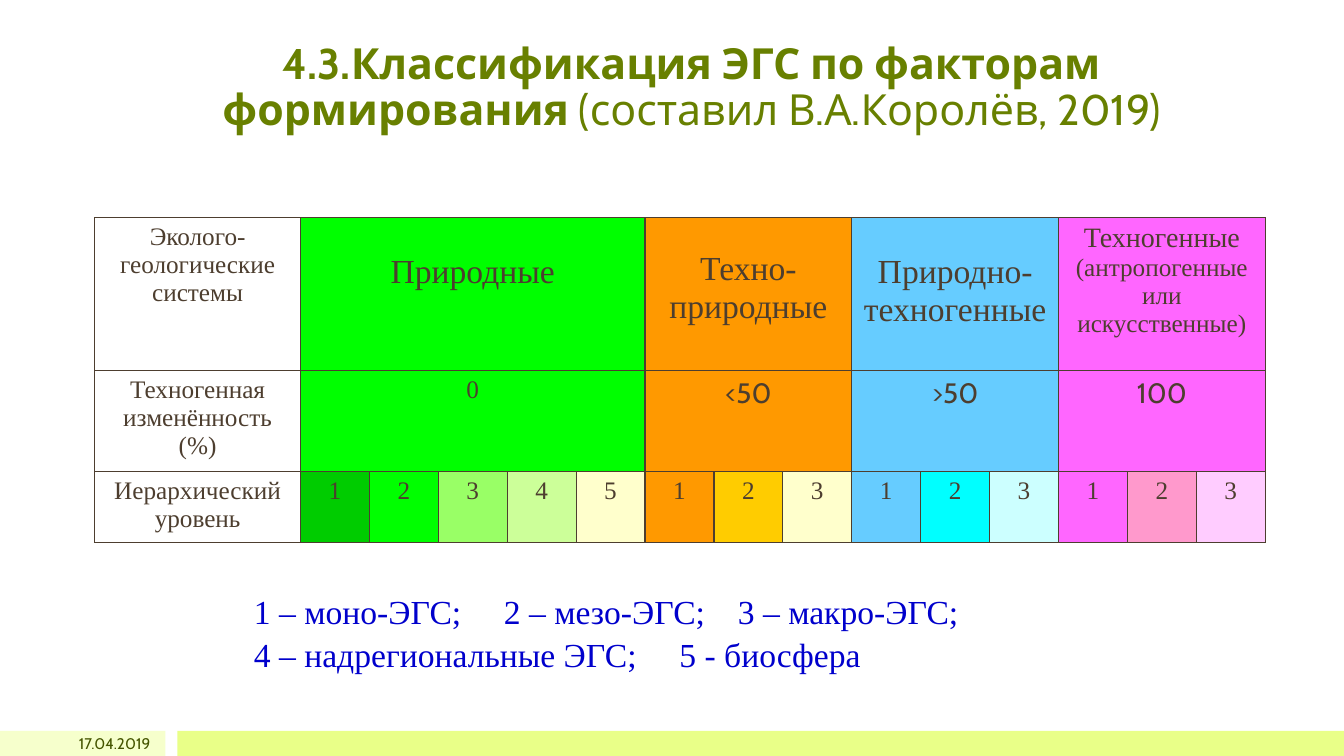
from lxml import etree
from pptx import Presentation
from pptx.dml.color import RGBColor
from pptx.enum.shapes import MSO_SHAPE
from pptx.enum.text import MSO_ANCHOR, PP_ALIGN
from pptx.oxml.ns import qn
from pptx.util import Inches, Pt

RECT = MSO_SHAPE.RECTANGLE
LEFT, CENTER, RIGHT = PP_ALIGN.LEFT, PP_ALIGN.CENTER, PP_ALIGN.RIGHT
TOP, MIDDLE, BOTTOM = MSO_ANCHOR.TOP, MSO_ANCHOR.MIDDLE, MSO_ANCHOR.BOTTOM
SANS, SERIF = "Cabin", "Times New Roman"
OLIVE = RGBColor(0x68, 0x80, 0x00)
DARK_OLIVE = RGBColor(0x45, 0x55, 0x00)
PALE_LIME = RGBColor(0xF6, 0xFF, 0xCC)
LIME = RGBColor(0xE9, 0xFF, 0x88)
BROWN = RGBColor(0x4D, 0x3E, 0x2F)
BLUE = RGBColor(0x00, 0x00, 0xCC)
WHITE = RGBColor(0xFF, 0xFF, 0xFF)
GREEN = RGBColor(0x00, 0xFF, 0x00)
ORANGE = RGBColor(0xFF, 0x99, 0x00)
SKY = RGBColor(0x66, 0xCC, 0xFF)
PINK = RGBColor(0xFF, 0x66, 0xFF)
CREAM = RGBColor(0xFF, 0xFF, 0xCC)
DEEP_GREEN = RGBColor(0x00, 0xCC, 0x00)
LIGHT_GREEN = RGBColor(0x99, 0xFF, 0x66)
PALE_GREEN = RGBColor(0xCC, 0xFF, 0x99)
YELLOW = RGBColor(0xFF, 0xCC, 0x00)
CYAN = RGBColor(0x00, 0xFF, 0xFF)
PALE_CYAN = RGBColor(0xCC, 0xFF, 0xFF)
ROSE = RGBColor(0xFF, 0x99, 0xCC)
PALE_PINK = RGBColor(0xFF, 0xCC, 0xFF)

TITLE = [("4.3.Классификация ЭГС по факторам формирования", {"bold": True}),
         (" (составил В.А.Королёв, 2019)", {})]
DATE = "17.04.2019"
ROW_HEADS = [["Эколого-геологические", "системы"],
             ["Техногенная изменённость", "(%)"],
             ["Иерархический", "уровень"]]
GROUPS = [
    {"name": [("Природные", 24)], "top": 0.36, "share": "0", "share_font": (SERIF, 18),
     "fill": GREEN, "levels": [DEEP_GREEN, GREEN, LIGHT_GREEN, PALE_GREEN, CREAM]},
    {"name": [("Техно-природные", 24)], "top": 0.33, "share": "<50", "share_font": (SANS, 20),
     "fill": ORANGE, "levels": [ORANGE, YELLOW, CREAM]},
    {"name": [("Природно-техногенные", 24)], "top": 0.36, "share": ">50", "share_font": (SANS, 20),
     "fill": SKY, "levels": [SKY, CYAN, PALE_CYAN]},
    {"name": [("Техногенные", 20), ("(антропогенные или искусственные)", 18)], "top": 0.05,
     "share": "100", "share_font": (SANS, 20), "fill": PINK, "levels": [PINK, ROSE, PALE_PINK]},
]
LEGEND = [("1 – моно-ЭГС;\t2 – мезо-ЭГС;\t3 – макро-ЭГС;", [2.48, 4.8]),
          ("4 – надрегиональные ЭГС;\t5 - биосфера", [4.22])]
HEAD_W, TABLE_W = 2.04, 11.61
ROW_H = [1.52, 1.0, 0.66]


def write(tf, paragraphs, size=18, font=SERIF, color=BROWN, align=CENTER, spacing=None):
    for i, runs in enumerate(paragraphs):
        p = tf.paragraphs[0] if i == 0 else tf.add_paragraph()
        p.alignment = align
        if spacing:
            p.line_spacing = spacing
        for text, fmt in runs:
            r = p.add_run()
            r.text = text
            r.font.size = Pt(fmt.get("size", size))
            r.font.name = font
            r.font.bold = fmt.get("bold", False)
            r.font.color.rgb = color


def text_box(s, box, anchor, paragraphs, **fmt):
    tf = s.shapes.add_textbox(*map(Inches, box)).text_frame
    tf.word_wrap = True
    tf.vertical_anchor = anchor
    write(tf, paragraphs, **fmt)
    return tf


def fill_cell(cell, paragraphs, fill, top=0.05, **fmt):
    cell.fill.solid()
    cell.fill.fore_color.rgb = fill
    cell.margin_top = Inches(top)
    write(cell.text_frame, paragraphs, **fmt)


def add_borders(cell):
    tcPr = cell._tc.get_or_add_tcPr()
    for i, side in enumerate(("lnL", "lnR", "lnT", "lnB")):
        ln = etree.Element(qn("a:" + side), w=str(Pt(1)))
        solid = etree.SubElement(ln, qn("a:solidFill"))
        etree.SubElement(solid, qn("a:srgbClr"), val=str(BROWN))
        tcPr.insert(i, ln)


def add_tabs(p, stops):
    tabs = etree.SubElement(p._p.get_or_add_pPr(), qn("a:tabLst"))
    for stop in stops:
        etree.SubElement(tabs, qn("a:tab"), pos=str(Inches(stop)), algn="l")


def add_classification(s):
    n = sum(len(g["levels"]) for g in GROUPS)
    table = s.shapes.add_table(len(ROW_H), n + 1, Inches(0.94), Inches(2.16),
                               Inches(TABLE_W), Inches(sum(ROW_H))).table
    table.first_row = table.horz_banding = False
    for i, col in enumerate(table.columns):
        col.width = Inches((TABLE_W - HEAD_W) / n if i else HEAD_W)
    for i, (h, head) in enumerate(zip(ROW_H, ROW_HEADS)):
        table.rows[i].height = Inches(h)
        fill_cell(table.cell(i, 0), [[(line, {})] for line in head], WHITE)
    c = 1
    for g in GROUPS:
        last = c + len(g["levels"]) - 1
        for row in (0, 1):
            table.cell(row, c).merge(table.cell(row, last))
        name = [[(text, {"size": size})] for text, size in g["name"]]
        fill_cell(table.cell(0, c), name, g["fill"], top=g["top"])
        font, size = g["share_font"]
        fill_cell(table.cell(1, c), [[(g["share"], {})]], g["fill"], font=font, size=size)
        for i, shade in enumerate(g["levels"]):
            fill_cell(table.cell(2, c + i), [[(str(i + 1), {})]], shade)
        c = last + 1
    for cell in table.iter_cells():
        add_borders(cell)


def main():
    prs = Presentation()
    prs.slide_width, prs.slide_height = Inches(13.33), Inches(7.5)
    s = prs.slides.add_slide(prs.slide_layouts[6])
    for x, w, color in ((0, 1.64, PALE_LIME), (1.76, 11.57, LIME)):
        bar = s.shapes.add_shape(RECT, Inches(x), Inches(7.25), Inches(w), Inches(0.25))
        bar.shadow.inherit = False
        bar.fill.solid()
        bar.fill.fore_color.rgb = color
        bar.line.fill.background()
    text_box(s, (1.54, 0.36, 10.64, 1.03), BOTTOM, [TITLE],
             size=30.6, font=SANS, color=OLIVE, spacing=0.9)
    text_box(s, (0.5, 7.25, 1.09, 0.25), MIDDLE, [[(DATE, {})]],
             size=11, font=SANS, color=DARK_OLIVE, align=RIGHT)
    add_classification(s)
    tf = text_box(s, (2.42, 5.78, 9.22, 0.91), TOP, [[(text, {})] for text, _ in LEGEND],
                  size=24, color=BLUE, align=LEFT, spacing=1.08)
    for p, (_, stops) in zip(tf.paragraphs, LEGEND):
        add_tabs(p, stops)
    prs.save("out.pptx")


if __name__ == "__main__":
    main()
